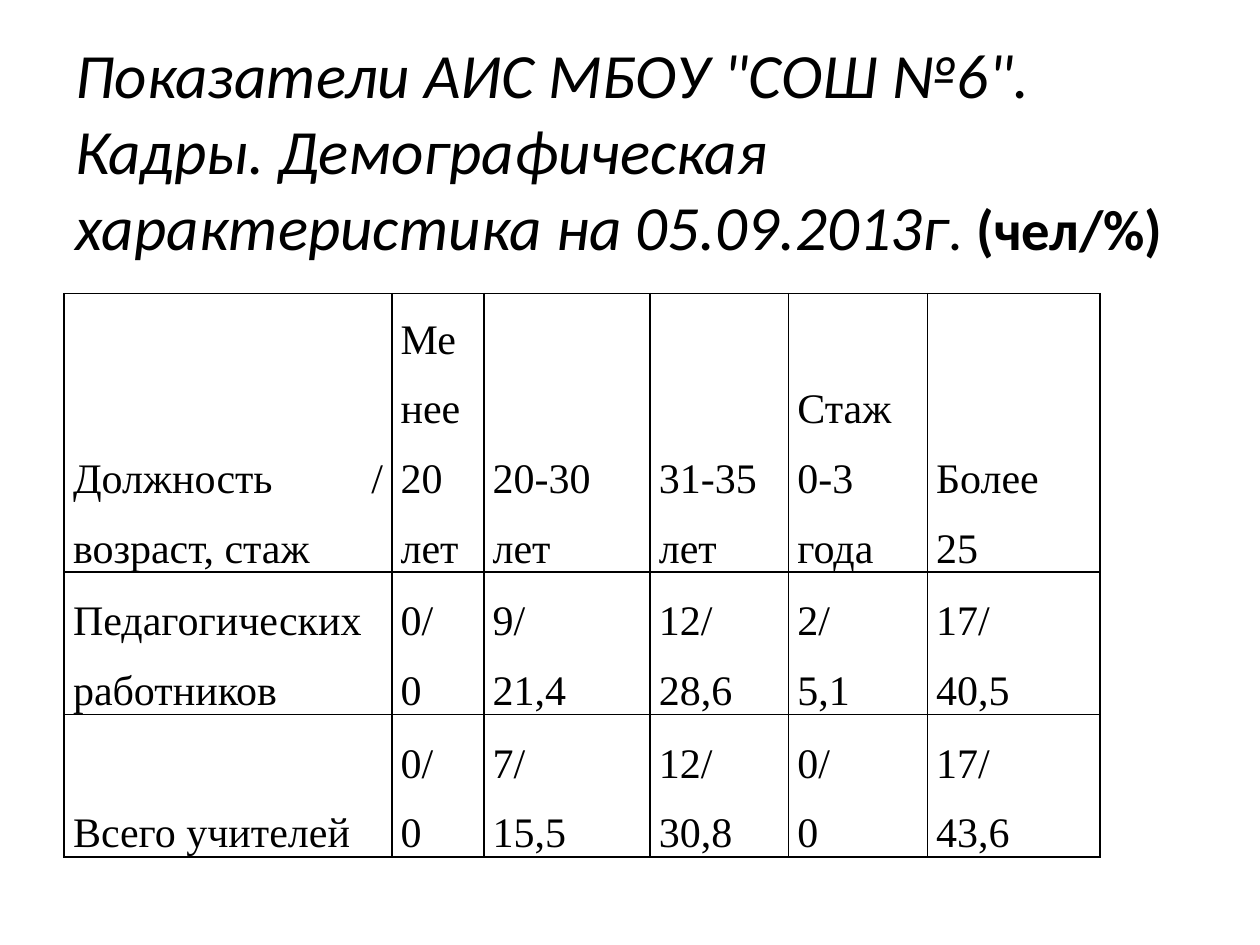
from dataclasses import dataclass

from lxml import etree
from pptx import Presentation
from pptx.dml.color import RGBColor
from pptx.enum.text import MSO_ANCHOR, MSO_AUTO_SIZE, PP_ALIGN
from pptx.oxml.ns import qn
from pptx.util import Inches, Pt

LEFT, JUSTIFY = PP_ALIGN.LEFT, PP_ALIGN.JUSTIFY
MIDDLE, BOTTOM = MSO_ANCHOR.MIDDLE, MSO_ANCHOR.BOTTOM
NO_AUTOFIT = MSO_AUTO_SIZE.NONE
BLACK = RGBColor(0, 0, 0)


@dataclass
class TextRun:
    text: str
    size: float
    font: str = "Calibri"
    bold: bool = False
    italic: bool = False


TITLE = [
    TextRun('Показатели АИС МБОУ "СОШ №6". Кадры. Демографическая '
            "характеристика на 05.09.2013г", 36, italic=True),
    TextRun(". ", 32.4, italic=True),
    TextRun("(чел/%)", 32.4, bold=True),
]

# A line feed separates paragraphs within a cell
ROWS = [
    ["Должность / возраст, стаж", "Менее 20 лет", "20-30 лет", "31-35 лет",
     "Стаж\n0-3 года", "Более 25"],
    ["Педагогических работников", "0/\n0", "9/\n21,4", "12/\n28,6",
     "2/\n5,1", "17/\n40,5"],
    ["Всего учителей", "0/\n0", "7/\n15,5", "12/\n30,8", "0/\n0", "17/\n43,6"],
]
COL_WIDTHS = [2.6, 0.73, 1.32, 1.1, 1.1, 1.37]
ROW_HEIGHTS = [1.44, 1.13, 1.13]


def add_run(p, item: TextRun) -> None:
    r = p.add_run()
    r.text = item.text
    f = r.font
    f.name, f.size = item.font, Pt(item.size)
    f.bold, f.italic = item.bold, item.italic
    f.color.rgb = BLACK


def add_borders(cell) -> None:
    tc_pr = cell._tc.get_or_add_tcPr()
    for i, side in enumerate(("lnL", "lnR", "lnT", "lnB")):
        ln = etree.Element(qn(f"a:{side}"), w=str(Pt(1)))
        fill = etree.SubElement(ln, qn("a:solidFill"))
        etree.SubElement(fill, qn("a:srgbClr"), val=str(BLACK))
        tc_pr.insert(i, ln)  # borders come before the fill


def fill_cell(cell, text: str) -> None:
    cell.fill.background()
    cell.vertical_anchor = BOTTOM
    cell.margin_left = cell.margin_right = Inches(0.07)
    cell.margin_top = cell.margin_bottom = 0
    tf = cell.text_frame
    for i, line in enumerate(text.split("\n")):
        p = tf.add_paragraph() if i else tf.paragraphs[0]
        p.alignment = JUSTIFY
        p.line_spacing = 1.5
        add_run(p, TextRun(line, 24, "Times New Roman"))
    add_borders(cell)


def add_title(s) -> None:
    title = s.shapes.title
    title.left, title.top = Inches(0.5), Inches(0.25)
    title.width, title.height = Inches(9), Inches(1.87)
    tf = title.text_frame
    tf.word_wrap = True
    tf.auto_size = NO_AUTOFIT
    tf.vertical_anchor = MIDDLE
    p = tf.paragraphs[0]
    p.alignment = LEFT
    for item in TITLE:
        add_run(p, item)


def add_staff_table(s) -> None:
    table = s.shapes.add_table(
        len(ROWS), len(COL_WIDTHS), Inches(0.51), Inches(2.33),
        Inches(sum(COL_WIDTHS)), Inches(sum(ROW_HEIGHTS))).table
    table.first_row = table.horz_banding = False
    for column, width in zip(table.columns, COL_WIDTHS):
        column.width = Inches(width)
    for row, height, texts in zip(table.rows, ROW_HEIGHTS, ROWS):
        row.height = Inches(height)
        for cell, text in zip(row.cells, texts):
            fill_cell(cell, text)


def main() -> None:
    prs = Presentation()
    prs.slide_width, prs.slide_height = Inches(10), Inches(7.5)
    s = prs.slides.add_slide(prs.slide_layouts[5])  # Title Only
    add_title(s)
    add_staff_table(s)
    prs.save("out.pptx")


if __name__ == "__main__":
    main()
